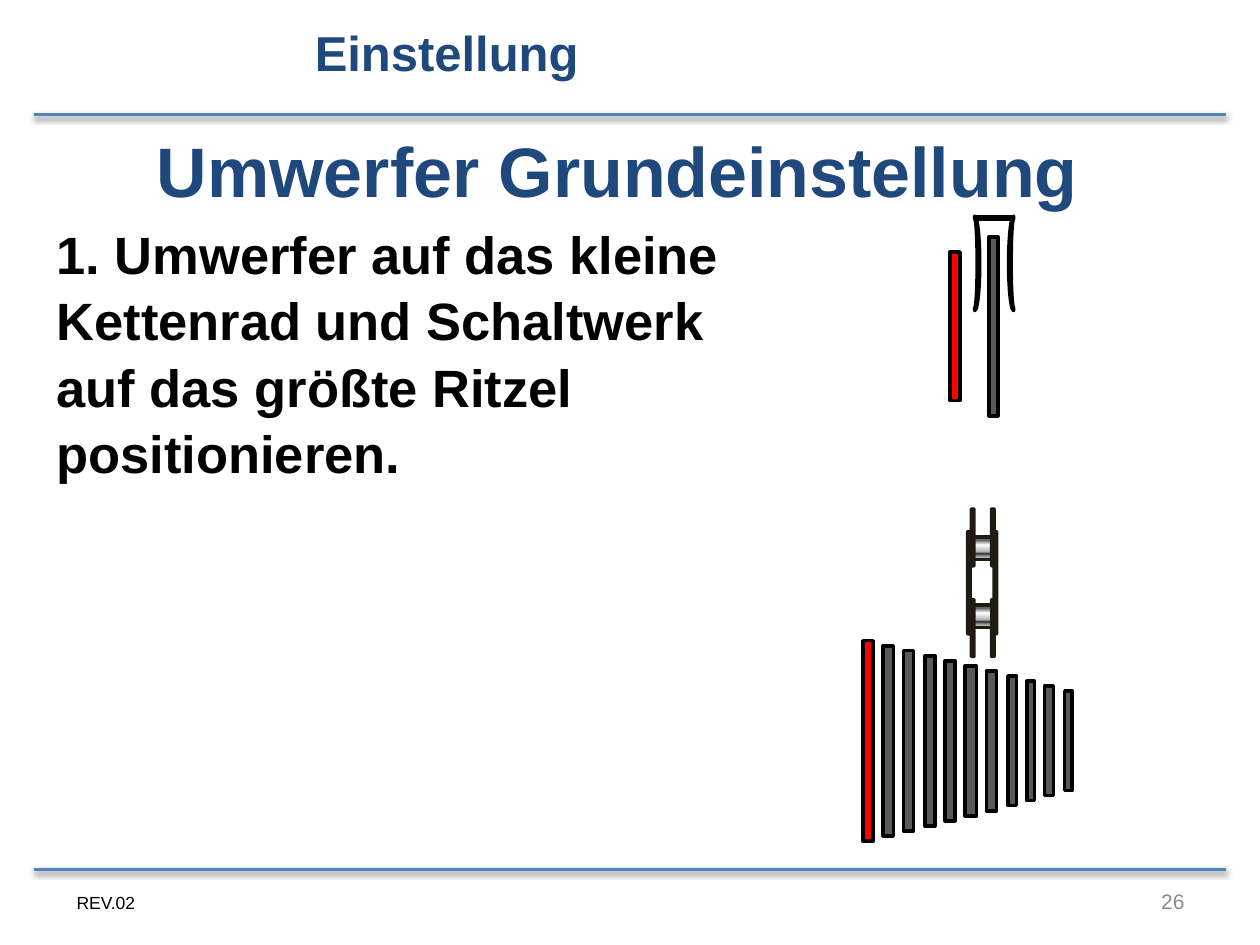
import pptx
import pptx.util
import pptx.oxml
import pptx.dml.color
import pptx.enum.shapes
import pptx.enum.text
import pptx.oxml.ns

Inches, Pt = pptx.util.Inches, pptx.util.Pt
SHAPE = pptx.enum.shapes.MSO_SHAPE
ALIGN = pptx.enum.text.PP_ALIGN
ANCHOR = pptx.enum.text.MSO_ANCHOR
NS = pptx.oxml.ns.nsdecls("a")

COLORS = {"rule": "4F81BD", "heading": "1F497D", "text": "000000", "number": "8C8C8C",
          "gear": "595959", "active": "FF0000", "cage": "404040", "chain": "1E1C11"}

TITLE = "Umwerfer Grundeinstellung"
# text, box, size, colour, bold, wrap, alignment, anchor, line spacing
TEXTS = [
    ("REV.02", (0.51, 7.03, 0.68, 0.27), 10, "text", False, False, ALIGN.LEFT, ANCHOR.TOP, 1.0),
    ("26", (7.17, 6.95, 2.33, 0.4), 12, "number", False, True, ALIGN.RIGHT, ANCHOR.MIDDLE, 1.0),
    ("1. Umwerfer auf das kleine Kettenrad und Schaltwerk auf das größte Ritzel positionieren.",
     (0.35, 1.69, 5.98, 2.12), 30, "text", True, True, ALIGN.LEFT, ANCHOR.TOP, 1.05),
    ("Einstellung", (2.4, 0.13, 2.32, 0.57), 28, "heading", True, False, ALIGN.LEFT, ANCHOR.TOP, 1.0),
]
RULES_Y = [0.91, 6.9]

# Sprockets from largest to smallest: left, width
SPROCKETS = [(6.85, 0.08), (7.01, 0.08), (7.17, 0.08), (7.34, 0.08), (7.5, 0.08), (7.66, 0.09),
             (7.83, 0.08), (8, 0.07), (8.15, 0.06), (8.29, 0.07), (8.45, 0.06)]
SPROCKET_MIDDLE, LARGEST, STEP = 5.88, 1.59, 0.08
CHAINRINGS = [((7.54, 2, 0.08, 1.18), "active"), ((7.85, 1.88, 0.07, 1.42), "gear")]

# Chain parts from back to front: kind, box
CHAIN = [
    ("plate", (7.68, 4.22, 0.02, 0.81)),
    ("plate", (7.87, 4.76, 0.02, 0.45)),
    ("plate", (7.89, 4.22, 0.02, 0.81)),
    ("roller", (7.72, 4.26, 0.15, 0.18)),
    ("roller", (7.72, 4.8, 0.15, 0.18)),
    ("plate", (7.71, 4.04, 0.02, 0.45)),
    ("plate", (7.87, 4.04, 0.02, 0.45)),
    ("plate", (7.71, 4.76, 0.02, 0.45)),
]
# preset, gradient stops, gradient direction
CHAIN_STYLES = {
    "plate": (SHAPE.ROUNDED_RECTANGLE,
              [(0, "808080"), (13, "5F5F5F"), (21, "5F5F5F"), (63, "FFFFFF"),
               (67, "B2B2B2"), (69, "292929"), (82, "777777"), (100, "EAEAEA")],
              '<a:path path="rect"><a:fillToRect l="100000" t="100000"/></a:path>'),
    "roller": (SHAPE.RECTANGLE,
               [(0, "CBCBCB"), (13, "5F5F5F"), (15, "5F5F5F"), (36, "FFFFFF"),
                (67, "B2B2B2"), (75, "292929"), (82, "777777"), (100, "EAEAEA")],
               '<a:lin ang="5400000" scaled="0"/>'),
}
CAGE_ARCS = [(7.36, 90), (7.67, 270)]  # left, rotation


def rgb(name):
    return pptx.dml.color.RGBColor.from_string(COLORS[name])


def inches(box):
    return [Inches(v) for v in box]


def write(sp, text, size, color, bold, wrap, align, anchor, spacing=1.0):
    tf = sp.text_frame
    tf.word_wrap, tf.vertical_anchor = wrap, anchor
    tf.text = text
    p = tf.paragraphs[0]
    p.alignment, p.line_spacing = align, spacing
    p.font.name, p.font.size, p.font.bold = "Arial", Pt(size), bold
    p.font.color.rgb = rgb(color)


def add_part(shapes, preset, box, fill, line="text"):
    sp = shapes.add_shape(preset, *inches(box))
    sp.shadow.inherit = False
    sp.fill.solid()
    sp.fill.fore_color.rgb = rgb(fill)
    sp.line.color.rgb, sp.line.width = rgb(line), Pt(2)
    return sp


def add_line(shapes, x1, x2, y, color, width, effect=""):
    """Add a level line; effect is the XML of its shadow, if any."""
    line = shapes.add_connector(pptx.enum.shapes.MSO_CONNECTOR.STRAIGHT, *inches((x1, y, x2, y)))
    line.line.color.rgb, line.line.width = rgb(color), Pt(width)
    line._element.spPr.append(pptx.oxml.parse_xml(f"<a:effectLst {NS}>{effect}</a:effectLst>"))


def set_gradient(sp, stops, direction):
    gs = "".join(f'<a:gs pos="{pos * 1000}"><a:srgbClr val="{color}"/></a:gs>' for pos, color in stops)
    xml = f"<a:gradFill {NS}><a:gsLst>{gs}</a:gsLst>{direction}</a:gradFill>"
    spPr = sp._element.spPr
    spPr.replace(spPr.find(pptx.oxml.ns.qn("a:solidFill")), pptx.oxml.parse_xml(xml))


prs = pptx.Presentation()
prs.slide_width, prs.slide_height = Inches(10), Inches(7.5)
s = prs.slides.add_slide(prs.slide_layouts[5])

title = s.shapes.title
title.left, title.top, title.width, title.height = inches((0, 0.96, 9.8, 0.77))
write(title, TITLE, 40, "heading", True, True, ALIGN.CENTER, ANCHOR.TOP)

rule_shadow = ('<a:outerShdw blurRad="40000" dist="20000" dir="5400000" rotWithShape="0">'
               '<a:srgbClr val="000000"><a:alpha val="38000"/></a:srgbClr></a:outerShdw>')
for y in RULES_Y:
    add_line(s.shapes, 0.27, 9.73, y, "rule", 2, rule_shadow)

for text, box, *style in TEXTS:
    write(s.shapes.add_textbox(*inches(box)), text, *style)

for i, (left, width) in enumerate(SPROCKETS):
    height = LARGEST - i * STEP
    add_part(s.shapes, SHAPE.RECTANGLE, (left, SPROCKET_MIDDLE - height / 2, width, height),
             "gear" if i else "active")

chain = s.shapes.add_group_shape()
for kind, box in CHAIN:
    preset, stops, direction = CHAIN_STYLES[kind]
    set_gradient(add_part(chain.shapes, preset, box, "gear", "chain"), stops, direction)

for box, color in CHAINRINGS:
    add_part(s.shapes, SHAPE.RECTANGLE, box, color)

cage = s.shapes.add_group_shape()
for left, rotation in CAGE_ARCS:
    add_part(cage.shapes, SHAPE.BLOCK_ARC, (left, 2.05, 0.75, 0.08), "cage").rotation = rotation
add_line(cage.shapes, 7.73, 8.05, 1.73, "text", 3.5)

prs.save("out.pptx")
